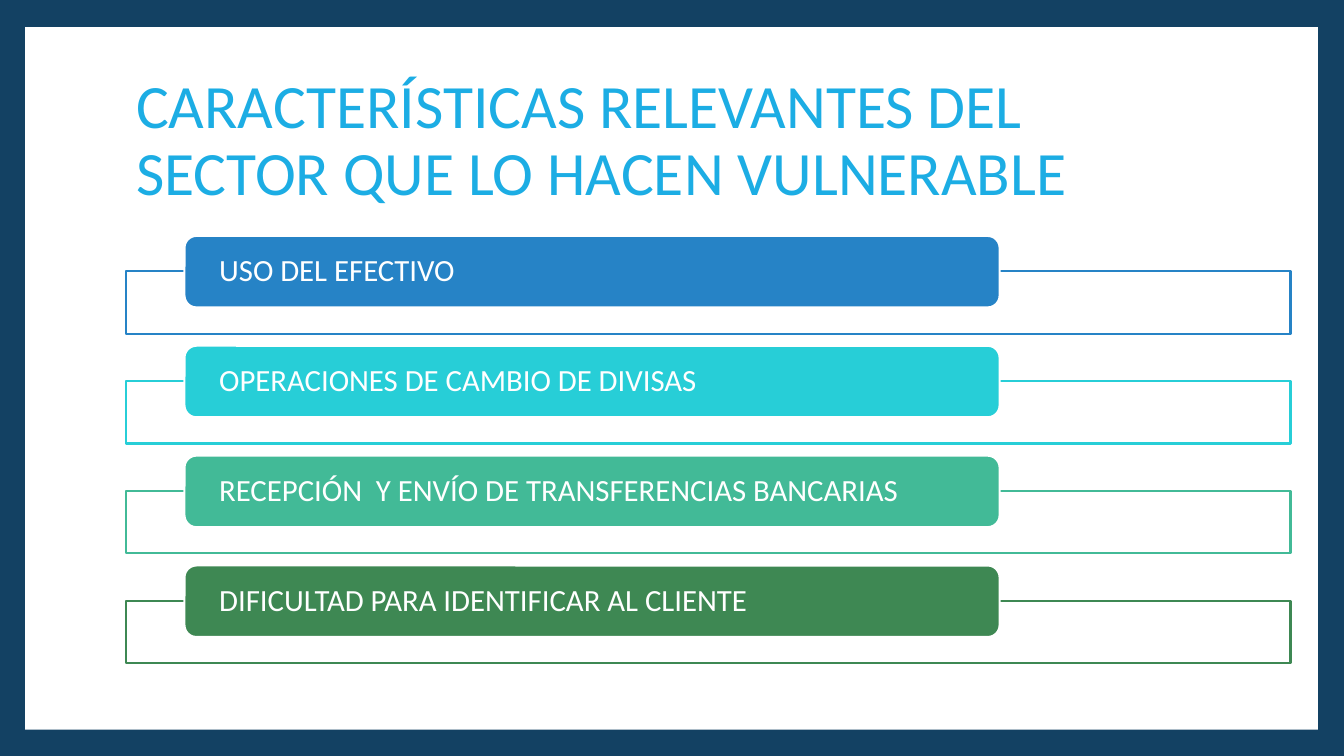
from pptx import Presentation
from pptx.dml.color import RGBColor
from pptx.enum.shapes import MSO_SHAPE
from pptx.enum.text import MSO_ANCHOR, PP_ALIGN
from pptx.oxml.ns import qn
from pptx.util import Inches, Pt

FONT = "Calibri"
WHITE = "FFFFFF"
FEATURES = [
    ("USO DEL EFECTIVO", "2683C6"),
    ("OPERACIONES DE CAMBIO DE DIVISAS", "27CED7"),
    ("RECEPCIÓN  Y ENVÍO DE TRANSFERENCIAS BANCARIAS", "42BA97"),
    ("DIFICULTAD PARA IDENTIFICAR AL CLIENTE", "3E8853"),
]


def rgb(value):
    """Turn a hex string into a colour."""
    return RGBColor.from_string(value)


def add_block(slide, preset, box, fill, line=None):
    """Add a filled shape in a box given in inches."""
    block = slide.shapes.add_shape(preset, *map(Inches, box))
    block.shadow.inherit = False
    block.fill.solid()
    block.fill.fore_color.rgb = rgb(fill)
    if line:
        block.line.color.rgb = rgb(line)
        block.line.width = Pt(1.5)
    else:
        block.line.fill.background()
    return block


def write(frame, text, size, color):
    """Set and format left-aligned text, centred vertically."""
    frame.text = text
    frame.word_wrap = True
    frame.vertical_anchor = MSO_ANCHOR.MIDDLE
    paragraph = frame.paragraphs[0]
    paragraph.alignment = PP_ALIGN.LEFT
    paragraph.line_spacing = 0.9
    font = paragraph.runs[0].font
    font.name = FONT
    font.size = Pt(size)
    font.color.rgb = rgb(color)


def add_frame(slide, box):
    """Colour the background and lay the white page behind the title."""
    slide.background.fill.solid()
    slide.background.fill.fore_color.rgb = rgb("134163")
    page = add_block(slide, MSO_SHAPE.RECTANGLE, box, WHITE)
    slide.shapes.title.element.addprevious(page.element)


def add_title(slide, box, text):
    """Place and format the title placeholder."""
    title = slide.shapes.title
    title.left, title.top, title.width, title.height = map(Inches, box)
    write(title.text_frame, text, 44, "1CADE4")


def add_feature(slide, box, text, color):
    """Draw an outlined box with a label tab over its top edge."""
    left, top, width, height = box
    outline = add_block(slide, MSO_SHAPE.RECTANGLE,
                        (left, top + 0.35, width, height - 0.35), WHITE, color)
    white = outline.fill._xPr.find(qn("a:solidFill"))[0]
    white.makeelement(qn("a:alpha"), {"val": "90000"})
    white.append(white.makeelement(qn("a:alpha"), {"val": "90000"}))
    label = add_block(slide, MSO_SHAPE.ROUNDED_RECTANGLE,
                      (left + 0.58, top, width * 0.7, 0.71), color, WHITE)
    frame = label.text_frame
    frame.margin_left = frame.margin_right = Inches(0.31)
    frame.margin_top = frame.margin_bottom = 0
    write(frame, text, 22, WHITE)


def add_feature_list(slide, box, pitch):
    """Stack the features down the box at an equal pitch."""
    left, top, width, height = box
    feature_height = height - pitch * (len(FEATURES) - 1)
    for row, (text, color) in enumerate(FEATURES):
        add_feature(slide, (left, top + row * pitch, width, feature_height), text, color)


def main():
    """Build and save the slide."""
    deck = Presentation()
    deck.slide_width, deck.slide_height = Inches(13.33), Inches(7.5)
    slide = deck.slides.add_slide(deck.slide_layouts.get_by_name("Title Only"))
    add_frame(slide, (0.25, 0.27, 12.82, 6.97))
    add_title(slide, (1.25, 0.67, 10.8, 1.48),
              "CARACTERÍSTICAS RELEVANTES DEL SECTOR QUE LO HACEN VULNERABLE")
    add_feature_list(slide, (1.25, 2.34, 11.55, 4.24), 1.09)
    deck.save("out.pptx")


if __name__ == "__main__":
    main()
